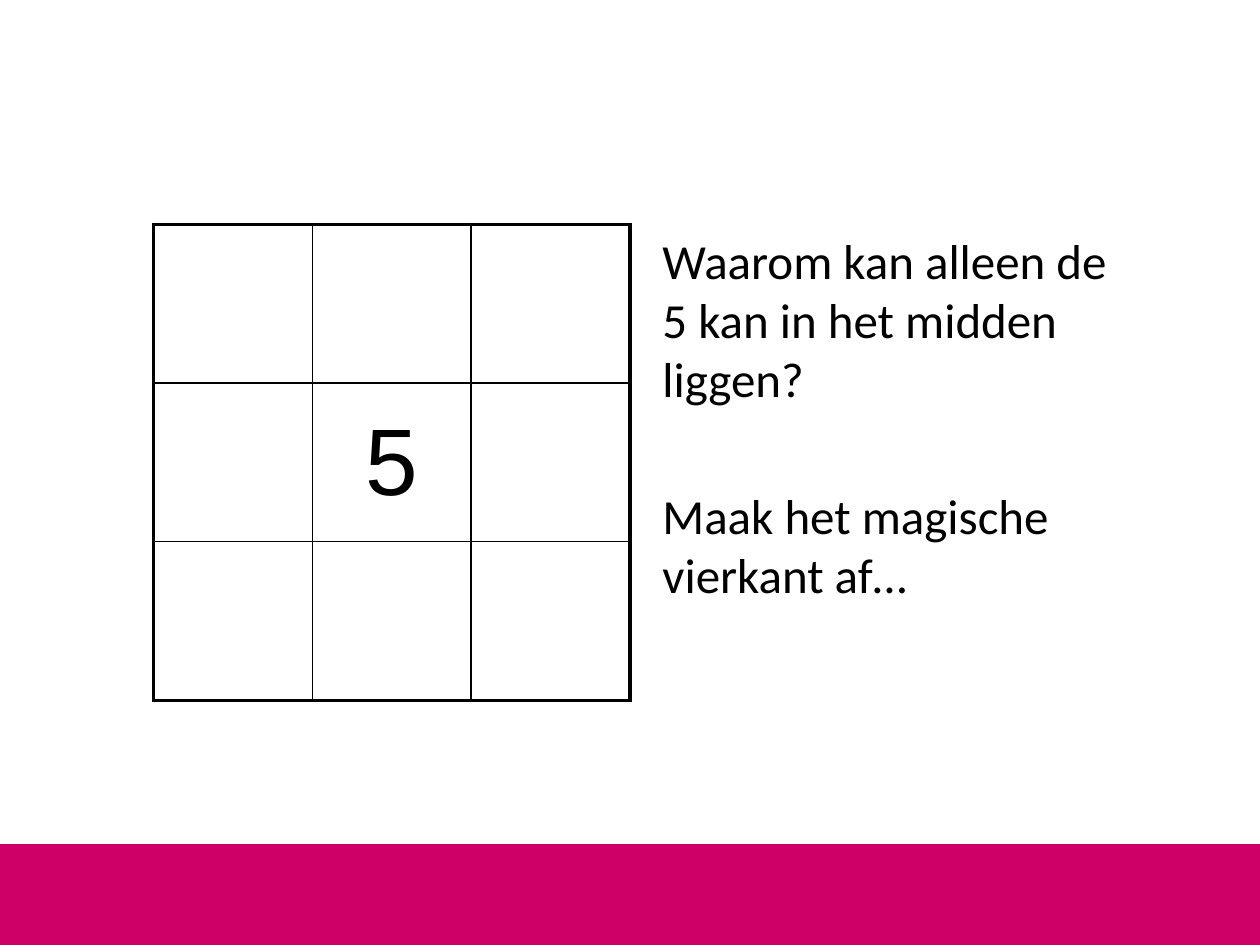
import pptx
import pptx.dml.color
import pptx.enum.shapes
import pptx.enum.text
import pptx.oxml.ns
import pptx.util
from lxml import etree
from pptx.util import Inches


def colour(hex_string):
    return pptx.dml.color.RGBColor.from_string(hex_string)


def add_border(cell, side, points):
    ns = pptx.oxml.ns.qn
    line = etree.SubElement(cell._tc.get_or_add_tcPr(), ns("a:ln" + side),
                            w=str(pptx.util.Pt(points)))
    fill = etree.SubElement(line, ns("a:solidFill"))
    etree.SubElement(fill, ns("a:srgbClr"), val="000000")


presentation = pptx.Presentation()
presentation.slide_width = Inches(10)
presentation.slide_height = Inches(7.5)
slide = presentation.slides.add_slide(presentation.slide_layouts[6])

# Footer band
band = slide.shapes.add_shape(pptx.enum.shapes.MSO_SHAPE.RECTANGLE,
                              Inches(0), Inches(6.7), Inches(10), Inches(0.8))
band.shadow.inherit = False
band.fill.solid()
band.fill.fore_color.rgb = colour("CC0066")
band.line.fill.background()

# Magic square: thick outside edge, thin inner lines
size = 3
square = slide.shapes.add_table(size, size, Inches(1.22), Inches(1.78),
                                Inches(3.78), Inches(3.78)).table
square.first_row = False
square.horz_banding = False
for row in range(size):
    for column in range(size):
        cell = square.cell(row, column)
        on_edge = {"L": column == 0, "R": column == size - 1,
                   "T": row == 0, "B": row == size - 1}
        for side, outside in on_edge.items():
            add_border(cell, side, 2.25 if outside else 1)
        cell.fill.background()

# Number in the middle
middle = square.cell(1, 1)
middle.text = "5"
middle.vertical_anchor = pptx.enum.text.MSO_ANCHOR.MIDDLE
number = middle.text_frame.paragraphs[0]
number.alignment = pptx.enum.text.PP_ALIGN.CENTER
number_format = {"name": "Arial", "size": pptx.util.Pt(54)}
for attribute, value in number_format.items():
    setattr(number.runs[0].font, attribute, value)
number.runs[0].font.color.rgb = colour("000000")

# Questions
questions = slide.shapes.add_textbox(Inches(5.16), Inches(1.78),
                                     Inches(3.94), Inches(3.7)).text_frame
questions.word_wrap = True
questions.text = ("Waarom kan alleen de 5 kan in het midden liggen?\n"
                  "Maak het magische vierkant af…")
question_format = {"name": "Calibri", "size": pptx.util.Pt(28)}
for question in questions.paragraphs:
    for attribute, value in question_format.items():
        setattr(question.runs[0].font, attribute, value)
    question.runs[0].font.color.rgb = colour("000000")
questions.paragraphs[1].space_before = pptx.util.Pt(45)

presentation.save("out.pptx")
